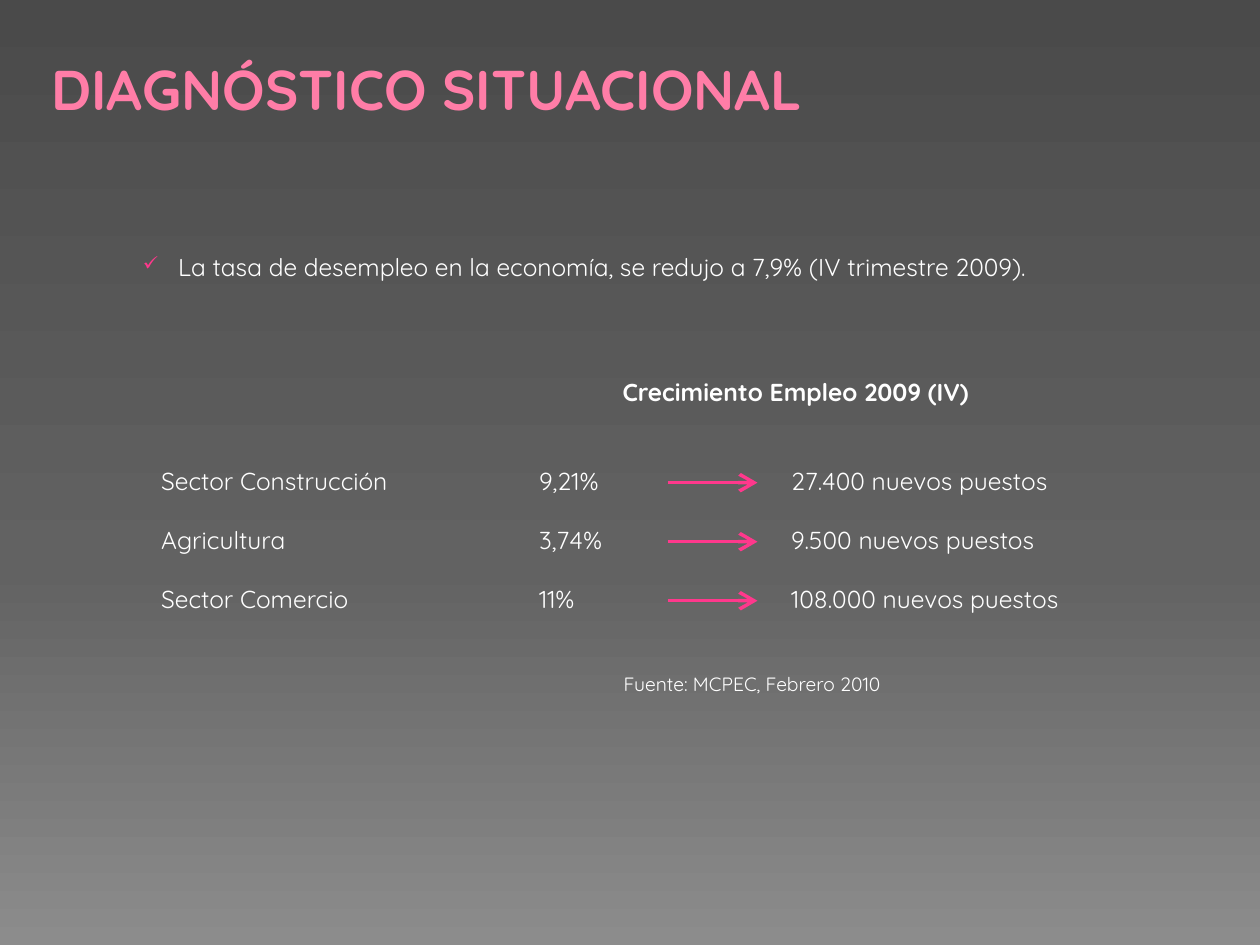
from lxml import etree
from pptx import Presentation
from pptx.dml.color import RGBColor
from pptx.enum.shapes import MSO_CONNECTOR
from pptx.enum.text import MSO_ANCHOR, PP_ALIGN
from pptx.oxml.ns import qn
from pptx.util import Cm, Pt

STRAIGHT = MSO_CONNECTOR.STRAIGHT
TOP, BOTTOM = MSO_ANCHOR.TOP, MSO_ANCHOR.BOTTOM
CENTER, JUSTIFY = PP_ALIGN.CENTER, PP_ALIGN.JUSTIFY
WHITE, PINK, ROSE = "FFFFFF", "FF388C", "FF7DA7"
BACKDROP = [(0, "4A4A4A"), (60, "626262"), (100, "8C8C8C")]
SECTORS = [
    ("Sector Construcción", "9,21%", "27.400 nuevos puestos"),
    ("Agricultura", "3,74%", "9.500 nuevos puestos"),
    ("Sector Comercio", "11%", "108.000 nuevos puestos"),
]
COLUMNS = [(2.95, 7.62), (10.57, 2.8), (15.65, 6.93)]  # left, width


def rgb(value):
    return RGBColor.from_string(value)


def add_xml(parent, tag, **attributes):
    return etree.SubElement(parent, qn(tag), attributes)


class Deck:
    """Holds the text style and the slide being built."""

    font = "Quicksand"

    def __init__(self, width, height):
        self.presentation = Presentation()
        self.presentation.slide_width = Cm(width)
        self.presentation.slide_height = Cm(height)
        self.slide = self.presentation.slides.add_slide(
            self.presentation.slide_layouts[6])

    def backdrop(self, stops):
        """Fill the slide with a gradient running from top to bottom."""
        fill = self.slide.background.fill
        fill.gradient()
        fill.gradient_angle = 270
        stop_list = next(self.slide.element.iter(qn("a:gsLst")))
        for stop in list(stop_list):
            stop_list.remove(stop)
        for percent, colour in stops:
            stop = add_xml(stop_list, "a:gs", pos=str(percent * 1000))
            add_xml(stop, "a:srgbClr", val=colour)

    def text(self, lines, left, top, width, height, size=14, colour=WHITE,
             bold=False, align=JUSTIFY, anchor=TOP, inset=0.27, gap=0, indent=0):
        """Add a text box and return its paragraphs."""
        frame = self.slide.shapes.add_textbox(
            Cm(left), Cm(top), Cm(width), Cm(height)).text_frame
        frame.word_wrap = True
        frame.vertical_anchor = anchor
        frame.margin_top = Cm(inset)
        frame.text = "\n".join(lines)
        for number, paragraph in enumerate(frame.paragraphs):
            paragraph.alignment = align
            paragraph.space_before = Pt(gap if number else 0)
            paragraph.font.name = self.font
            paragraph.font.size = Pt(size)
            paragraph.font.bold = bold
            paragraph.font.color.rgb = rgb(colour)
            paragraph._p.get_or_add_pPr().set("indent", str(Cm(indent)))
        return frame.paragraphs

    def columns(self, records, places, top, height, gap):
        """Add one text box per field, with a line for each record."""
        for values, (left, width) in zip(zip(*records), places):
            self.text(values, left, top, width, height, gap=gap, indent=0.05)

    def checked(self, line, *box, inset):
        """Add a line with a check mark as its bullet."""
        paragraph = self.text([line], *box, inset=inset, indent=-0.71)[0]
        properties = paragraph._p.get_or_add_pPr()
        properties.set("marL", str(Cm(0.75)))
        colour = etree.Element(qn("a:buClr"))
        add_xml(colour, "a:srgbClr", val=PINK)
        size = etree.Element(qn("a:buSzPct"), val="80000")
        mark = etree.Element(qn("a:buChar"), char="✓")
        for part in (colour, size, mark):
            properties.find(qn("a:defRPr")).addprevious(part)

    def arrow(self, start, end, y):
        connector = self.slide.shapes.add_connector(
            STRAIGHT, Cm(start), Cm(y), Cm(end), Cm(y))
        connector.line.color.rgb = rgb(PINK)
        connector.line.width = Pt(2)
        add_xml(connector.line._get_or_add_ln(), "a:tailEnd",
                type="arrow", w="lg", len="lg")
        add_xml(connector._element.spPr, "a:effectLst")


def main():
    deck = Deck(25.4, 19.05)
    deck.backdrop(BACKDROP)
    deck.columns(SECTORS, COLUMNS, 9.12, 3.38, gap=17)
    deck.text(["Crecimiento Empleo 2009 (IV)"], 11.28, 7.34, 9.53, 0.99,
              bold=True, align=CENTER)
    for row in range(len(SECTORS)):
        deck.arrow(13.46, 15.27, 9.73 + 1.19 * row)
    deck.text(["Fuente: MCPEC, Febrero 2010"], 12.27, 13.28, 10.74, 0.99,
              size=11, indent=0.05)
    deck.checked("La tasa de desempleo en la economía, se redujo a 7,9% "
                 "(IV trimestre 2009).", 2.59, 4.37, 20.24, 1.6, inset=0.71)
    deck.text(["DIAGNÓSTICO SITUACIONAL"], 0.79, 0.79, 23.83, 1.78, size=32,
              colour=ROSE, bold=True, anchor=BOTTOM, inset=0.13)
    deck.presentation.save("out.pptx")


if __name__ == "__main__":
    main()
